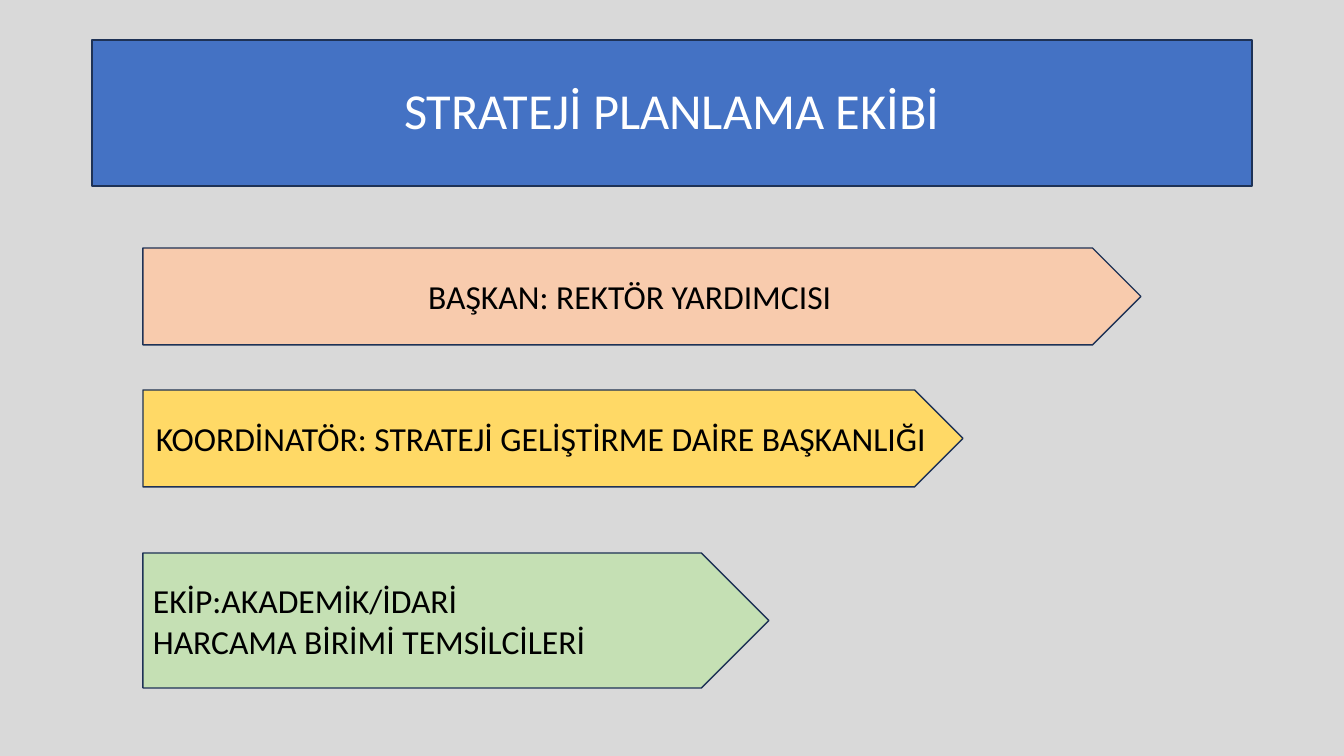
from pptx import Presentation
from pptx.dml.color import RGBColor
from pptx.enum.shapes import MSO_SHAPE as Shape
from pptx.enum.text import MSO_ANCHOR as Anchor, PP_ALIGN as Align
from pptx.util import Emu, Pt

EMU_PER_PX = 914400 / 100.8
OUTLINE = "1E3256"
ARROW_LEFT = 143


def px(length):
    return Emu(round(length * EMU_PER_PX))


def color(hex_code):
    return RGBColor.from_string(hex_code)


def add_panel(slide, kind, box, fill, text, size, ink, align=Align.CENTER, spacing=1.0):
    panel = slide.shapes.add_shape(kind, *map(px, box))
    panel.shadow.inherit = False
    panel.fill.solid()
    panel.fill.fore_color.rgb = color(fill)
    panel.line.color.rgb = color(OUTLINE)
    panel.line.width = Pt(1)
    frame = panel.text_frame
    frame.text = text
    frame.word_wrap = True
    frame.vertical_anchor = Anchor.MIDDLE
    for paragraph in frame.paragraphs:
        paragraph.alignment = align
        paragraph.line_spacing = spacing
        for run in paragraph.runs:
            run.font.name = "Calibri"
            run.font.size = Pt(size)
            run.font.color.rgb = color(ink)


def add_role(slide, top, width, height, fill, text, align=Align.CENTER):
    box = (ARROW_LEFT, top, width, height)
    add_panel(slide, Shape.PENTAGON, box, fill, text, 24, "000000", align)


def main():
    deck = Presentation()
    deck.slide_width, deck.slide_height = px(1344), px(756)
    slide = deck.slides.add_slide(deck.slide_layouts[6])
    slide.background.fill.solid()
    slide.background.fill.fore_color.rgb = color("D9D9D9")

    add_panel(slide, Shape.RECTANGLE, (92, 40, 1160, 146), "4472C4",
              "STRATEJİ PLANLAMA EKİBİ", 36, "FFFFFF", spacing=0.9)
    add_role(slide, 248, 998, 97, "F8CBAD", "BAŞKAN: REKTÖR YARDIMCISI")
    add_role(slide, 390, 820, 97, "FFD966",
             "KOORDİNATÖR: STRATEJİ GELİŞTİRME DAİRE BAŞKANLIĞI")
    add_role(slide, 553, 626, 135, "C5E0B4",
             "EKİP:AKADEMİK/İDARİ\nHARCAMA BİRİMİ TEMSİLCİLERİ", Align.LEFT)

    deck.save("out.pptx")


if __name__ == "__main__":
    main()
